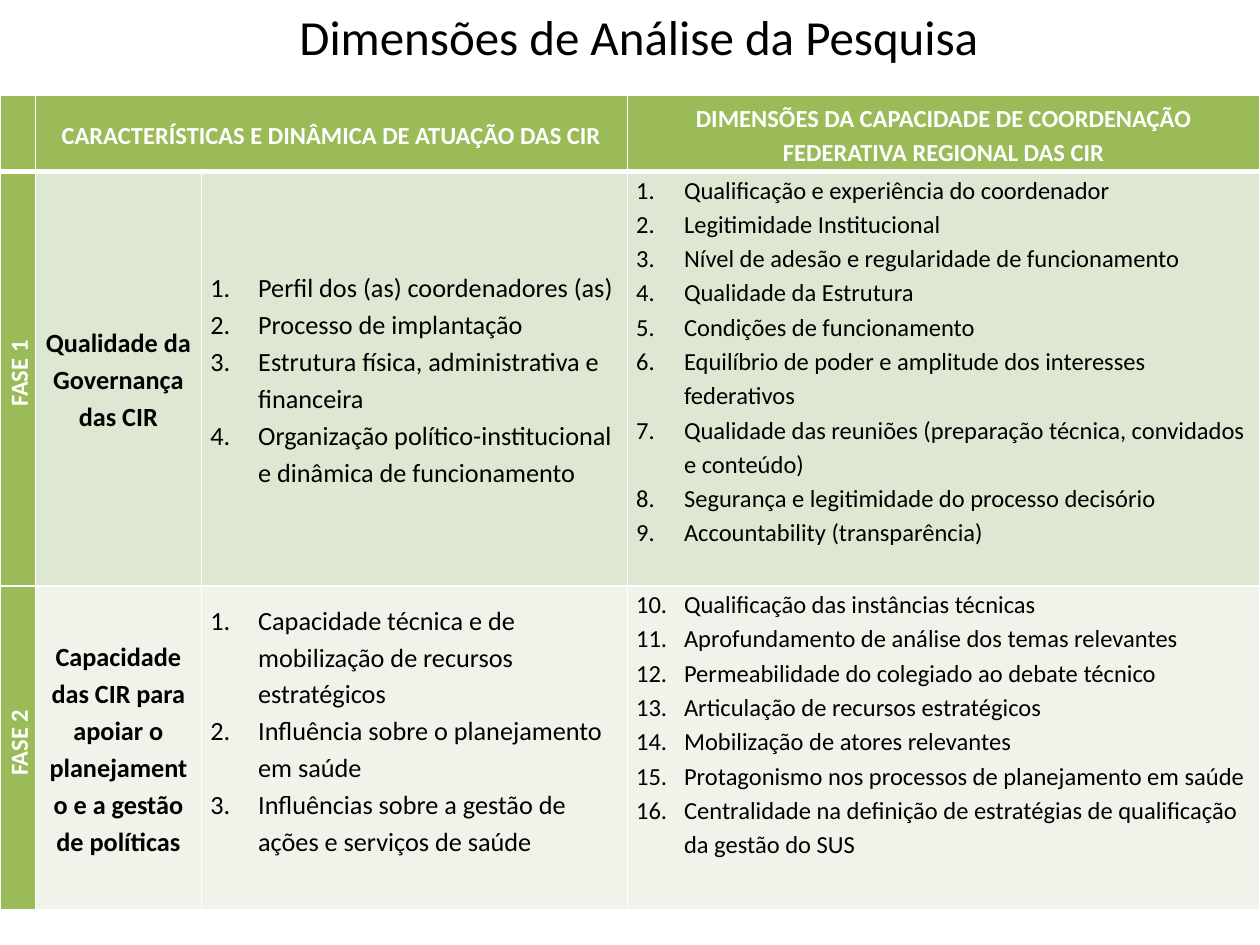
from dataclasses import dataclass
from typing import Optional

from lxml.etree import SubElement as Sub
from pptx import Presentation
from pptx.dml.color import RGBColor as RGB
from pptx.enum.text import MSO_ANCHOR as Anchor, MSO_AUTO_SIZE as Auto, PP_ALIGN as Align
from pptx.oxml.ns import qn
from pptx.util import Inches, Pt

WHITE = RGB(0xFF, 0xFF, 0xFF)
BLACK = RGB(0, 0, 0)
GREEN = RGB(0x9B, 0xBB, 0x59)
SAGE = RGB(0xDE, 0xE7, 0xD1)
PALE = RGB(0xEF, 0xF3, 0xEA)

WIDE, HIGH = Inches(10), Inches(7.5)
COLS = (0.028, 0.132, 0.338, 0.502)  # shares of the slide width
ROWS = (0.08, 0.4387, 0.3427)  # shares of the slide height
TOP = 0.1013
HANG = Inches(0.38)


@dataclass
class Entry:
    row: int
    col: int
    lines: tuple[str, ...]
    fill: RGB
    size: int = 14
    color: RGB = BLACK
    bold: bool = False
    start: Optional[int] = None  # first number of a numbered list
    anchor: Anchor = Anchor.MIDDLE
    turned: bool = False
    foot: float = 0  # bottom inset in inches


@dataclass
class Phase:
    name: str
    theme: str
    traits: tuple[str, ...]
    skills: tuple[str, ...]
    start: int
    fill: RGB
    foot: float = 0


HEADS = {
    0: "",
    1: "CARACTERÍSTICAS E DINÂMICA DE ATUAÇÃO DAS CIR",
    3: "DIMENSÕES DA CAPACIDADE DE COORDENAÇÃO FEDERATIVA REGIONAL DAS CIR",
}
PHASES = (
    Phase(
        "FASE 1",
        "Qualidade da Governança das CIR",
        (
            "Perfil dos (as) coordenadores (as)",
            "Processo de implantação",
            "Estrutura física, administrativa e financeira",
            "Organização político-institucional e dinâmica de funcionamento",
        ),
        (
            "Qualificação e experiência do coordenador",
            "Legitimidade Institucional",
            "Nível de adesão e regularidade de funcionamento",
            "Qualidade da Estrutura",
            "Condições de funcionamento",
            "Equilíbrio de poder e amplitude dos interesses federativos",
            "Qualidade das reuniões (preparação técnica, convidados e conteúdo)",
            "Segurança e legitimidade do processo decisório",
            "Accountability (transparência)",
        ),
        1, SAGE,
    ),
    Phase(
        "FASE 2",
        "Capacidade das CIR para apoiar o planejamento e a gestão de políticas",
        (
            "Capacidade técnica e de mobilização de recursos estratégicos",
            "Influência sobre o planejamento em saúde",
            "Influências sobre a gestão de ações e serviços de saúde",
        ),
        (
            "Qualificação das instâncias técnicas",
            "Aprofundamento de análise dos temas relevantes",
            "Permeabilidade do colegiado ao debate técnico",
            "Articulação de recursos estratégicos",
            "Mobilização de atores relevantes",
            "Protagonismo nos processos de planejamento em saúde",
            "Centralidade na definição de estratégias de qualificação da gestão do SUS",
        ),
        10, PALE, 0.29,
    ),
)


def style(para, size: int, color: RGB, bold: bool = False) -> None:
    font = para.font
    font.name, font.size, font.bold = "Calibri", Pt(size), bold
    font.color.rgb = color


def border(props, row: int) -> None:
    """White rules, with a thick one under the header row."""
    thick = {"B": row == 0, "T": row == 1}
    for side in "LRTB":
        width = Pt(3 if thick.get(side) else 1)
        line = Sub(props, qn(f"a:ln{side}"), w=str(width))
        paint = Sub(line, qn("a:solidFill"))
        Sub(paint, qn("a:srgbClr"), val=str(WHITE))


def number(para, start: int) -> None:
    props = para._p.get_or_add_pPr()
    props.set("marL", str(HANG))
    props.set("indent", str(-HANG))
    Sub(props, qn("a:buAutoNum"), type="arabicPeriod", startAt=str(start))


def write(cell, entry: Entry) -> None:
    props = cell._tc.get_or_add_tcPr()
    border(props, entry.row)
    cell.fill.solid()
    cell.fill.fore_color.rgb = entry.fill
    cell.margin_left = cell.margin_right = Inches(0.07)
    cell.margin_top, cell.margin_bottom = 0, Inches(entry.foot)
    cell.vertical_anchor = entry.anchor
    if entry.turned:
        props.set("vert", "vert270")
    frame = cell.text_frame
    frame.text = "\n".join(entry.lines)
    for para in frame.paragraphs:
        para.line_spacing = 1.15
        if entry.start:
            para.alignment = Align.LEFT
            number(para, entry.start)
        else:
            para.alignment = Align.CENTER
        if entry.turned:
            para._p.get_or_add_pPr().set("marL", str(Inches(0.08)))
        style(para, entry.size, entry.color, entry.bold)


def entries() -> list[Entry]:
    found = [Entry(0, col, (text,), GREEN, color=WHITE, bold=True)
             for col, text in HEADS.items()]
    for row, phase in enumerate(PHASES, 1):
        found += [
            Entry(row, 0, (phase.name,), GREEN, color=WHITE, bold=True, turned=True),
            Entry(row, 1, (phase.theme,), phase.fill, size=15, bold=True),
            Entry(row, 2, phase.traits, phase.fill, size=15, start=1, foot=phase.foot),
            Entry(row, 3, phase.skills, phase.fill, start=phase.start, anchor=Anchor.TOP),
        ]
    return found


def title(slide) -> None:
    box = slide.shapes.add_textbox(Inches(1.33), 0, Inches(7.48), Inches(0.57))
    frame = box.text_frame
    frame.word_wrap, frame.auto_size = True, Auto.SHAPE_TO_FIT_TEXT
    frame.text = "Dimensões de Análise da Pesquisa"
    para = frame.paragraphs[0]
    para.alignment = Align.CENTER
    style(para, 28, BLACK)


def grid(slide) -> None:
    table = slide.shapes.add_table(
        len(ROWS), len(COLS), 0, int(HIGH * TOP), WIDE, int(HIGH * sum(ROWS))).table
    for col, share in zip(table.columns, COLS):
        col.width = int(WIDE * share)
    for row, share in zip(table.rows, ROWS):
        row.height = int(HIGH * share)
    table.cell(0, 1).merge(table.cell(0, 2))
    for entry in entries():
        write(table.cell(entry.row, entry.col), entry)


def main() -> None:
    deck = Presentation()
    deck.slide_width, deck.slide_height = WIDE, HIGH
    slide = deck.slides.add_slide(deck.slide_layouts[6])
    title(slide)
    grid(slide)
    deck.save("out.pptx")


if __name__ == "__main__":
    main()
